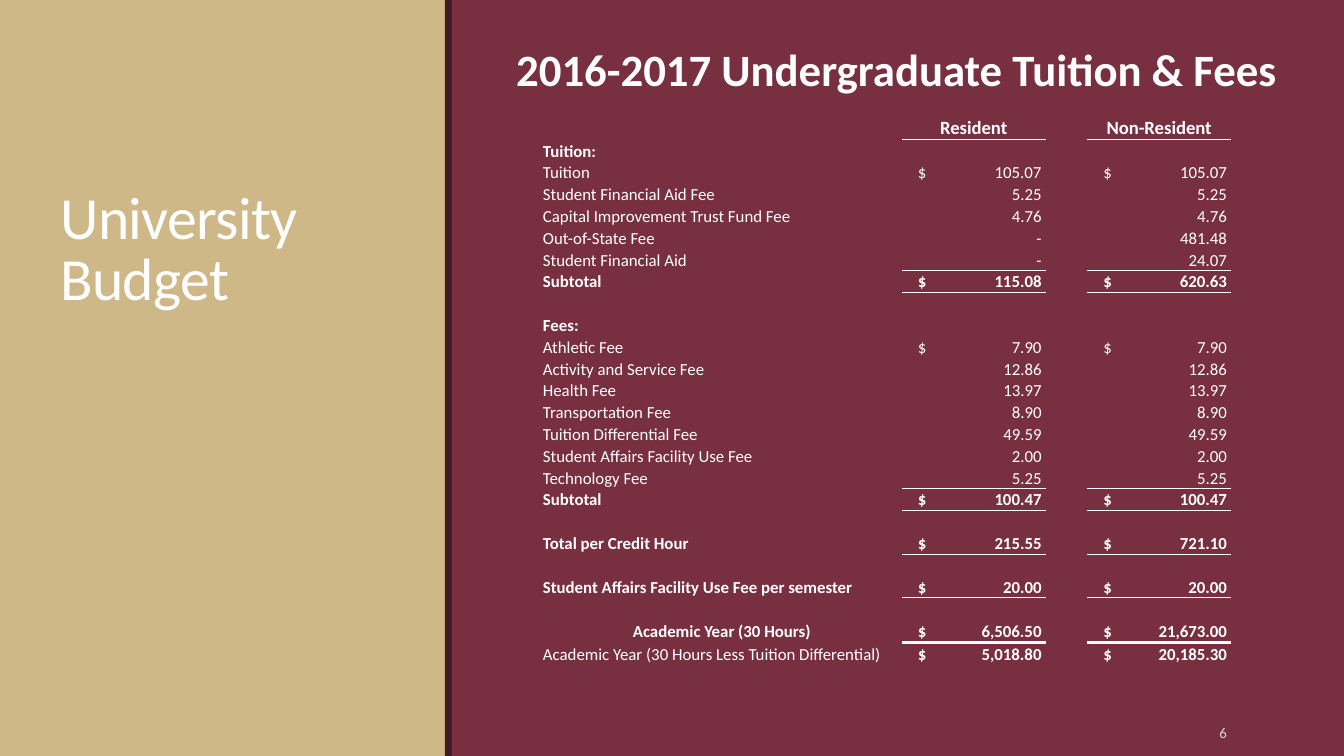
from lxml.etree import SubElement
from pptx import Presentation
from pptx.dml.color import RGBColor
from pptx.enum.shapes import MSO_SHAPE
from pptx.enum.text import MSO_ANCHOR, PP_ALIGN
from pptx.oxml import parse_xml
from pptx.oxml.ns import nsdecls, qn
from pptx.util import Inches, Pt

GARNET = RGBColor(0x78, 0x2F, 0x40)
DARK_GARNET = RGBColor(0x42, 0x1A, 0x24)
GOLD = RGBColor(0xCE, 0xB8, 0x88)
WHITE = RGBColor(0xFF, 0xFF, 0xFF)
GRAY = RGBColor(0xD9, 0xD9, 0xDB)
FONT = "Calibri"

SLIDE_WIDTH = 10
SLIDE_HEIGHT = SLIDE_WIDTH * 9 / 16

# Content: label, resident, non-resident, style flags
# b = bold label, v = bold values, $ = dollar sign, c = centred label,
# _ = thin rule below, = is a thick rule below
BLANK = ("", "", "", "")
FEES = [
    ("Tuition:", "", "", "b"),
    ("Tuition", "105.07", "105.07", "$"),
    ("Student Financial Aid Fee", "5.25", "5.25", ""),
    ("Capital Improvement Trust Fund Fee", "4.76", "4.76", ""),
    ("Out-of-State Fee", "-", "481.48", ""),
    ("Student Financial Aid", "-", "24.07", "_"),
    ("Subtotal", "115.08", "620.63", "bv$_"),
    BLANK,
    ("Fees:", "", "", "b"),
    ("Athletic Fee", "7.90", "7.90", "$"),
    ("Activity and Service Fee", "12.86", "12.86", ""),
    ("Health Fee", "13.97", "13.97", ""),
    ("Transportation Fee", "8.90", "8.90", ""),
    ("Tuition Differential Fee", "49.59", "49.59", ""),
    ("Student Affairs Facility Use Fee", "2.00", "2.00", ""),
    ("Technology Fee", "5.25", "5.25", "_"),
    ("Subtotal", "100.47", "100.47", "bv$_"),
    BLANK,
    ("Total per Credit Hour", "215.55", "721.10", "bv$_"),
    BLANK,
    ("Student Affairs Facility Use Fee per semester", "20.00", "20.00", "bv$_"),
    BLANK,
    ("Academic Year (30 Hours)", "6,506.50", "21,673.00", "bv$c="),
    ("Academic Year (30 Hours Less Tuition Differential)",
     "5,018.80", "20,185.30", "v$"),
]
HEADINGS = ("Resident", "Non-Resident")
COLUMN_WIDTHS = (2.68, 1.07, 0.31, 1.07)
VALUE_COLUMNS = (1, 3)
TABLE_HEIGHT, HEADING_HEIGHT, YEAR_HEIGHT = 4.1, 0.19, 0.17
RULE_WEIGHTS = {"_": 0.5, "=": 2}
NO_TABLE_STYLE = "{2D5ABB26-0587-4C30-8999-92F81FD0307C}"


def write(frame, text, size=9, bold=False, color=WHITE, align=PP_ALIGN.LEFT,
          line_spacing=None, tracking=None):
    """Put one formatted paragraph in a text frame and return it."""
    paragraph = frame.paragraphs[0]
    paragraph.alignment = align
    if line_spacing:
        paragraph.line_spacing = line_spacing
    run = paragraph.add_run()
    run.text = text
    run.font.name, run.font.size, run.font.bold = FONT, Pt(size), bold
    run.font.color.rgb = color
    if tracking:
        run.font._element.set("spc", str(int(tracking * 100)))
    return paragraph


def add_box(slide, left, top, width, height, anchor):
    frame = slide.shapes.add_textbox(
        Inches(left), Inches(top), Inches(width), Inches(height)).text_frame
    frame.word_wrap = True
    frame.vertical_anchor = anchor
    return frame


def add_band(slide, left, width, color):
    band = slide.shapes.add_shape(
        MSO_SHAPE.RECTANGLE, Inches(left), 0, Inches(width), Inches(SLIDE_HEIGHT))
    band.shadow.inherit = False
    band.fill.solid()
    band.fill.fore_color.rgb = color
    band.line.fill.background()


def rule(cell, side, points):
    """Draw one cell border, or clear it when points is None."""
    properties = cell._tc.get_or_add_tcPr()
    width = f'w="{Pt(points)}"' if points else ""
    paint = (f'<a:solidFill><a:srgbClr val="{WHITE}"/></a:solidFill>'
             if points else "<a:noFill/>")
    line = parse_xml(f'<a:{side} {nsdecls("a")} {width}>{paint}</a:{side}>')
    properties.insert(len(properties) - 1, line)  # keep the fill last


def write_amount(cell, amount, dollar, bold):
    if not dollar:
        cell.margin_right = Inches(0.03)
        write(cell.text_frame, amount, bold=bold, align=PP_ALIGN.RIGHT)
        return
    # Dollar sign at the left, amount on a right tab stop
    cell.margin_left = Inches(0.12)
    paragraph = write(cell.text_frame, f"$\t{amount}", bold=bold)
    stops = SubElement(paragraph._p.get_or_add_pPr(), qn("a:tabLst"))
    SubElement(stops, qn("a:tab"), pos=str(Inches(0.92)), algn="r")


def add_fee_table(slide):
    frame = slide.shapes.add_table(
        len(FEES) + 1, len(COLUMN_WIDTHS), Inches(4.03), Inches(0.85),
        Inches(sum(COLUMN_WIDTHS)), Inches(TABLE_HEIGHT))
    table = frame.table
    table.first_row = table.horz_banding = False
    table._tbl.tblPr.find(qn("a:tableStyleId")).text = NO_TABLE_STYLE

    # Grid
    for column, width in zip(table.columns, COLUMN_WIDTHS):
        column.width = Inches(width)
    fee_height = (TABLE_HEIGHT - HEADING_HEIGHT - 2 * YEAR_HEIGHT) / (len(FEES) - 2)
    heights = [HEADING_HEIGHT] + [fee_height] * (len(FEES) - 2) + [YEAR_HEIGHT] * 2
    for row, height in zip(table.rows, heights):
        row.height = Inches(height)
    for cell in table.iter_cells():
        cell.fill.background()
        cell.vertical_anchor = MSO_ANCHOR.BOTTOM
        cell.margin_left = cell.margin_right = cell.margin_top = Inches(0.01)
        cell.margin_bottom = 0

    # Text
    for column, heading in zip(VALUE_COLUMNS, HEADINGS):
        write(table.cell(0, column).text_frame, heading, size=10, bold=True,
              align=PP_ALIGN.CENTER)
    for r, (label, *amounts, style) in enumerate(FEES, start=1):
        if label:
            write(table.cell(r, 0).text_frame, label, bold="b" in style,
                  align=PP_ALIGN.CENTER if "c" in style else PP_ALIGN.LEFT)
        for column, amount in zip(VALUE_COLUMNS, amounts):
            if amount:
                write_amount(table.cell(r, column), amount, "$" in style, "v" in style)

    # Empty cells keep the small type so that rows stay low
    for cell in table.iter_cells():
        if not cell.text:
            SubElement(cell.text_frame.paragraphs[0]._p, qn("a:endParaRPr"), sz="900")

    # Rules, shared by the cells above and below
    weights = [0.5] + [RULE_WEIGHTS.get(style[-1:]) for *_, style in FEES]
    for r, (above, below) in enumerate(zip([None] + weights, weights)):
        for column in VALUE_COLUMNS:
            rule(table.cell(r, column), "lnT", above)
            rule(table.cell(r, column), "lnB", below)


def main():
    deck = Presentation()
    deck.slide_width, deck.slide_height = Inches(SLIDE_WIDTH), Inches(SLIDE_HEIGHT)
    slide = deck.slides.add_slide(deck.slide_layouts[6])
    slide.background.fill.solid()
    slide.background.fill.fore_color.rgb = GARNET

    # Side panel with the section title
    add_band(slide, 0, 3.32, GOLD)
    add_band(slide, 3.31, 0.05, DARK_GARNET)
    section = add_box(slide, 0.38, 0.49, 2.69, 1.88, MSO_ANCHOR.BOTTOM)
    section.margin_left = section.margin_right = Inches(0.07)
    section.margin_top = section.margin_bottom = Inches(0.04)
    write(section, "University Budget", size=32, line_spacing=0.85, tracking=-0.4)

    add_fee_table(slide)

    # Page number and heading
    page = add_box(slide, 8.12, 5.3, 1.08, 0.3, MSO_ANCHOR.MIDDLE)
    page.margin_right = Inches(0.07)
    write(page, "6", size=8, color=GRAY, align=PP_ALIGN.RIGHT)
    heading = add_box(slide, 3.52, 0.26, 6.3, 0.5, MSO_ANCHOR.TOP)
    write(heading, "2016-2017 Undergraduate Tuition & Fees", size=24, bold=True,
          align=PP_ALIGN.CENTER)
    deck.save("out.pptx")


if __name__ == "__main__":
    main()
